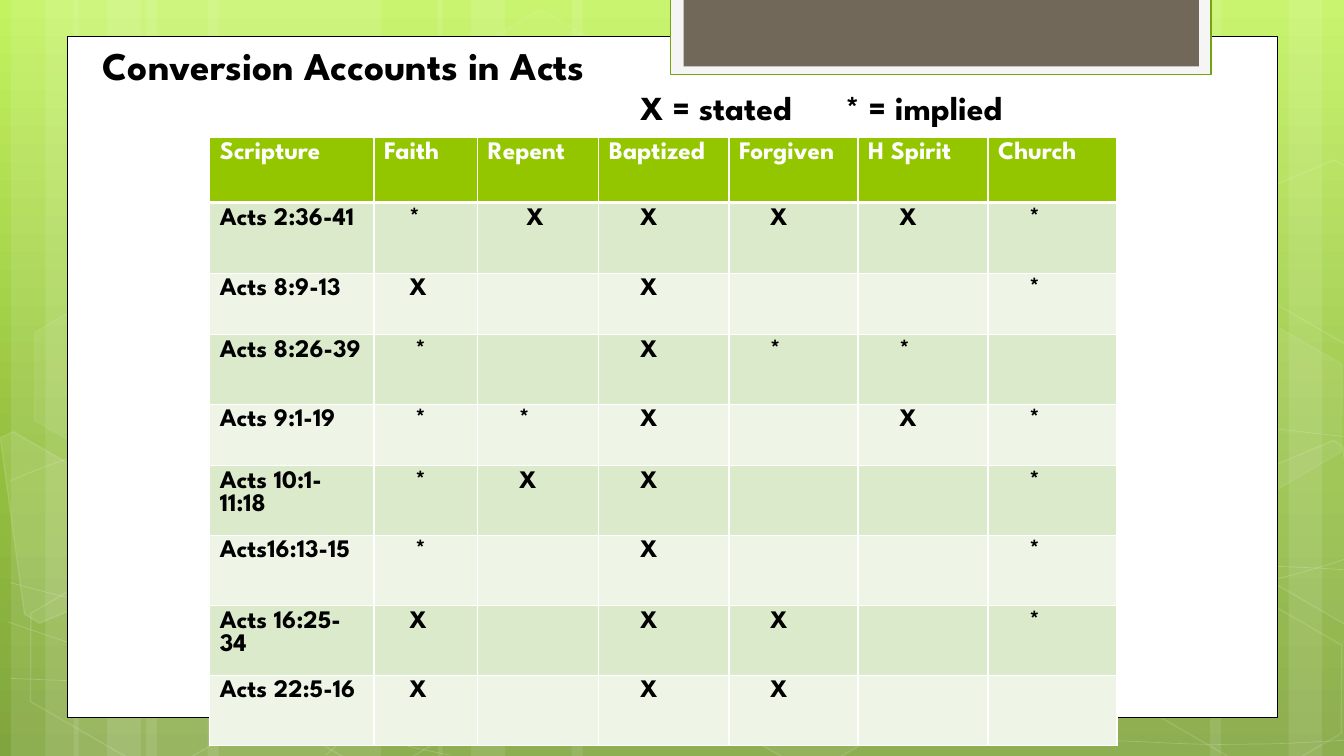
import copy
import math
import pptx
import pptx.dml.color
import pptx.enum.shapes
import pptx.enum.text
import pptx.oxml.ns
import pptx.util
from lxml import etree

Inches = pptx.util.Inches
Pt = pptx.util.Pt
qn = pptx.oxml.ns.qn
MSO = pptx.enum.shapes.MSO_SHAPE

COLORS = {
    "white": "FFFFFF", "black": "000000", "sky": "C3F35F", "leaf": "93BF3F",
    "moss": "81A53E", "tab": "F5F5F5", "tab_line": "74A510", "brown": "71685A",
    "header": "94C600", "band_dark": "DCEACC", "band_light": "EEF5E7",
}

STRIPES = [(1.45, 2.33), (0.11, 0.67), (0.45, 1.11), (2.06, 2.33), (0.73, 0.67),
           (1.06, 1.11), (9.78, 2.33), (12.78, 0.67), (12, 1.11), (5.67, 4.11),
           (4.34, 0.67), (4.67, 1.11)]

CURVES = [
    [(0.1, 6.73), (0.82, 6.76), (1.54, 6.79), (2.54, 6.78), (3.54, 6.77), (4.77, 6.75),
     (6.1, 6.65), (7.44, 6.55), (9.33, 6.36), (10.55, 6.17), (11.78, 5.98),
     (13.03, 5.68), (13.43, 5.51)],
    [(0.1, 4.77), (0.48, 4.61), (0.86, 4.46), (1.62, 4.31), (2.38, 4.16), (3.45, 3.94),
     (4.63, 3.87), (5.82, 3.8), (7.25, 3.79), (8.72, 3.87), (10.19, 3.95),
     (12.63, 4.26), (13.43, 4.34)],
    [(0.08, 6.17), (1.69, 6.72), (3.3, 7.27), (4.46, 7.49)],
    [(0.1, 5.78), (0.51, 5.89), (0.93, 6), (1.71, 6.16), (2.48, 6.31), (3.64, 6.56),
     (4.75, 6.73), (5.86, 6.9), (7.27, 7.08), (8.37, 7.18), (9.48, 7.29), (10.66, 7.33),
     (11.37, 7.36), (12.07, 7.4), (12.25, 7.38), (12.6, 7.38), (12.94, 7.37),
     (13.19, 7.35), (13.43, 7.34)],
    [(3.23, 7.49), (3.47, 7.29), (3.7, 7.09), (4.03, 6.91), (4.35, 6.73), (4.8, 6.53),
     (5.17, 6.39), (5.54, 6.25), (5.77, 6.19), (6.26, 6.09), (6.75, 5.99), (7.65, 5.85),
     (8.11, 5.78), (8.58, 5.71), (8.65, 5.71), (9.07, 5.69), (9.48, 5.66), (10.13, 5.63),
     (10.59, 5.62), (11.05, 5.61), (11.82, 5.62), (11.82, 5.62), (11.82, 5.62),
     (12.7, 5.62), (12.7, 5.62), (12.95, 5.63), (13.17, 5.64), (13.29, 5.65),
     (13.41, 5.66), (13.37, 5.65), (13.41, 5.66)],
]
CURVES[4][21:24] = [(11.82, 5.62), (12.7, 5.62), (12.7, 5.62)]

HEXAGONS = [(4.45, 0.36, 4, 8), (6.62, 5.89, 6, 12), (0.15, 5.91, None, 12),
            (0.19, 3.12, 7, 8), (2.32, 5.92, None, 12), (11.12, 5.93, None, 12),
            (11.12, 3.14, 7, 8)]
TILT = 30

CUT_HEXAGONS = [
    ([(0, 4.34), (0.13, 4.28), (1.15, 4.87), (1.27, 5.81), (0.39, 6.18), (0.24, 6.09)],
     (0.48, 5.35), 10),
    ([(12.35, 4.74), (13.23, 4.37), (13.32, 4.43), (13.57, 6.25), (13.49, 6.28),
      (12.47, 5.69)], (13.13, 5.2), 4),
    ([(12.35, 1.96), (13.23, 1.59), (13.34, 1.65), (13.57, 3.46), (13.49, 3.5),
      (12.47, 2.91)], (13.13, 2.41), None),
]

COLUMNS = [1.63, 1.03, 1.2, 1.29, 1.28, 1.29, 1.28]
ROWS = [0.65, 0.7, 0.61, 0.69, 0.61, 0.69, 0.7, 0.69, 0.7]
ACCOUNTS = [
    ["Scripture", "Faith", "Repent", "Baptized", "Forgiven", "H Spirit", "Church"],
    ["Acts 2:36-41", "*", "X", "X", "X", "X", "*"],
    ["Acts 8:9-13", "X", "", "X", "", "", "*"],
    ["Acts 8:26-39", "*", "", "X", "*", "*", ""],
    ["Acts 9:1-19", "*", "*", "X", "", "X", "*"],
    ["Acts 10:1-11:18", "*", "X", "X", "", "", "*"],
    ["Acts16:13-15", "*", "", "X", "", "", "*"],
    ["Acts 16:25-34", "X", "", "X", "X", "", "*"],
    ["Acts 22:5-16", "X", "", "X", "X", "", ""],
]
MARK_INDENT = 0.31
SPECIAL_INDENTS = {(1, 1): 0.25, (1, 2): 0.38, (2, 1): 0.25, (7, 1): 0.25, (8, 1): 0.25}


def turn(points, center, degrees):
    cos, sin = math.cos(math.radians(degrees)), math.sin(math.radians(degrees))
    cx, cy = center
    return [(cx + (x - cx) * cos - (y - cy) * sin, cy + (x - cx) * sin + (y - cy) * cos)
            for x, y in points]


class Deck:
    font = "League Spartan"

    def __init__(self, prs):
        self.s = prs.slides.add_slide(prs.slide_layouts[6])

    def rgb(self, name):
        return pptx.dml.color.RGBColor.from_string(COLORS[name])

    def background(self, stops, angle):
        fill = self.s.background.fill
        fill.gradient()
        fill.gradient_angle = angle
        gs_list = self.s.element.find(".//" + qn("a:gsLst"))
        gs_list.append(copy.deepcopy(gs_list[-1]))
        for stop, (position, color) in zip(fill.gradient_stops, stops):
            stop.position = position
            stop.color.rgb = self.rgb(color)

    def paint(self, fill, color, alpha):
        fill.solid()
        fill.fore_color.rgb = self.rgb(color)
        if alpha:
            clr = fill._xPr.find(qn("a:solidFill"))[0]
            etree.SubElement(clr, qn("a:alpha")).set("val", str(alpha * 1000))

    def style(self, sp, fill=None, alpha=None, line=None, width=1, line_alpha=None):
        sp.shadow.inherit = False
        if fill:
            self.paint(sp.fill, fill, alpha)
        else:
            sp.fill.background()
        if line:
            sp.line.width = Pt(width)
            self.paint(sp.line.fill, line, line_alpha)
        else:
            sp.line.fill.background()

    def shape(self, kind, x, y, w, h, **style):
        sp = self.s.shapes.add_shape(kind, Inches(x), Inches(y), Inches(w), Inches(h))
        self.style(sp, **style)
        return sp

    def outline(self, points, close, **style):
        points = [(Inches(x), Inches(y)) for x, y in points]
        fb = self.s.shapes.build_freeform(*points[0])
        fb.add_line_segments(points[1:], close=close)
        sp = fb.convert_to_shape()
        self.style(sp, **style)
        return sp

    def curve(self, points, **style):
        sp = self.outline(points, False, **style)
        steps = sp._element.findall(".//" + qn("a:lnTo"))
        for i in range(0, len(steps), 3):
            bend = etree.Element(qn("a:cubicBezTo"))
            steps[i].addprevious(bend)
            for step in steps[i:i + 3]:
                bend.append(step[0])
                step.getparent().remove(step)

    def run(self, p, text, size, color):
        r = p.add_run()
        r.text = text
        r.font.size = Pt(size)
        r.font.name = self.font
        r.font.bold = True
        r.font.color.rgb = self.rgb(color)

    def text(self, x, y, w, h, text, size, tab=None):
        sp = self.s.shapes.add_textbox(Inches(x), Inches(y), Inches(w), Inches(h))
        tf = sp.text_frame
        tf.word_wrap = True
        tf.auto_size = pptx.enum.text.MSO_AUTO_SIZE.SHAPE_TO_FIT_TEXT
        p = tf.paragraphs[0]
        if tab:
            tabs = etree.SubElement(p._p.get_or_add_pPr(), qn("a:tabLst"))
            etree.SubElement(tabs, qn("a:tab"), pos=str(Inches(tab)), algn="l")
        self.run(p, text, size, "black")

    def border(self, cell, side, width):
        ln = etree.SubElement(cell._tc.get_or_add_tcPr(), qn("a:" + side), w=str(Pt(width)))
        fill = etree.SubElement(ln, qn("a:solidFill"))
        etree.SubElement(fill, qn("a:srgbClr"), val=COLORS["white"])

    def table(self, x, y, columns, rows, content):
        table = self.s.shapes.add_table(len(rows), len(columns), Inches(x), Inches(y),
                                        Inches(sum(columns)), Inches(sum(rows))).table
        for column, width in zip(table.columns, columns):
            column.width = Inches(width)
        for i, height in enumerate(rows):
            table.rows[i].height = Inches(height)
            band = "header" if i == 0 else "band_dark" if i % 2 else "band_light"
            for j, text in enumerate(content[i]):
                cell = table.cell(i, j)
                for side in ("lnL", "lnR", "lnT", "lnB"):
                    self.border(cell, side, 3 if (i, side) in ((0, "lnB"), (1, "lnT")) else 1)
                self.paint(cell.fill, band, None)
                if i and j and text:
                    cell.margin_left = Inches(0.1 + SPECIAL_INDENTS.get((i, j), MARK_INDENT))
                if text:
                    self.run(cell.text_frame.paragraphs[0], text, 18, "black" if i else "white")


def main():
    prs = pptx.Presentation()
    prs.slide_width, prs.slide_height = Inches(13.33), Inches(7.5)
    deck = Deck(prs)
    deck.background([(0, "sky"), (0.62, "leaf"), (1, "moss")], 270)
    for x, w in STRIPES:
        deck.shape(MSO.RECTANGLE, x, 0, w, 7.5, fill="white", alpha=10)
    for points in CURVES:
        deck.curve(points, line="white", width=0.5, line_alpha=20)
    for x, y, alpha, line_alpha in HEXAGONS:
        sp = deck.shape(MSO.HEXAGON, x, y, 2.34, 1.52, fill=alpha and "white", alpha=alpha,
                        line="white", line_alpha=line_alpha)
        sp.adjustments[0] = 0.285
        sp.rotation = TILT
    for points, center, alpha in CUT_HEXAGONS:
        sp = deck.outline(turn(points, center, -TILT), True, fill=alpha and "white",
                          alpha=alpha, line="white", line_alpha=12)
        sp.rotation = TILT
    deck.shape(MSO.RECTANGLE, 0.67, 0.36, 12, 6.76, fill="white", line="black", width=0.5)
    deck.shape(MSO.RECTANGLE, 6.65, -0.02, 5.36, 0.76, fill="tab", line="tab_line", width=1.25)
    deck.shape(MSO.RECTANGLE, 6.78, -0.02, 5.11, 0.68, fill="brown")
    deck.table(2.08, 1.36, COLUMNS, ROWS, ACCOUNTS)
    deck.text(0.92, 0.36, 5.75, 0.57, "Conversion Accounts in Acts", 28)
    deck.text(6.25, 0.81, 4.67, 0.5, "X = stated\t* = implied", 24, tab=2.04)
    prs.save("out.pptx")


if __name__ == "__main__":
    main()
